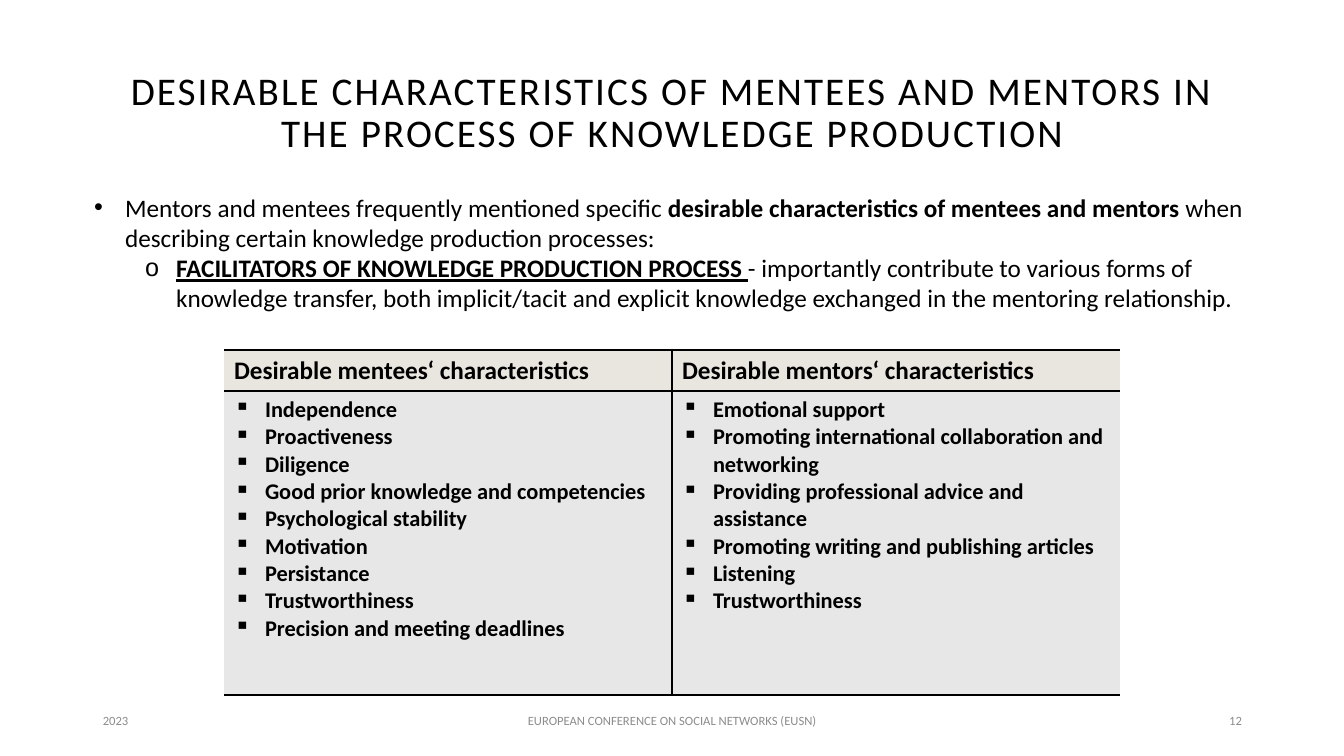
from lxml import etree
from pptx import Presentation
from pptx.dml.color import RGBColor
from pptx.enum.text import MSO_ANCHOR, MSO_AUTO_SIZE, PP_ALIGN
from pptx.oxml.ns import qn
from pptx.util import Pt

LEFT, CENTER, RIGHT = PP_ALIGN.LEFT, PP_ALIGN.CENTER, PP_ALIGN.RIGHT
MIDDLE, TOP = MSO_ANCHOR.MIDDLE, MSO_ANCHOR.TOP
FIXED = MSO_AUTO_SIZE.NONE

TITLE = "DESIRABLE CHARACTERISTICS OF MENTEES AND MENTORS IN THE PROCESS OF KNOWLEDGE PRODUCTION"
FINDINGS = [
    (0, "•", 31, [
        ("Mentors and mentees frequently mentioned specific ", {}),
        ("desirable characteristics of mentees and mentors ", {"bold": True}),
        ("when describing certain knowledge production processes:", {}),
    ]),
    (1, "o", 82, [
        ("FACILITATORS OF KNOWLEDGE PRODUCTION PROCESS ", {"bold": True, "underline": True}),
        ("- importantly contribute to various forms of knowledge transfer, both implicit/tacit "
         "and explicit knowledge exchanged in the mentoring relationship.", {}),
    ]),
]
CHARACTERISTICS = {
    "Desirable mentees‘ characteristics": [
        "Independence",
        "Proactiveness",
        "Diligence",
        "Good prior knowledge and competencies",
        "Psychological stability",
        "Motivation",
        "Persistance",
        "Trustworthiness",
        "Precision and meeting deadlines",
    ],
    "Desirable mentors‘ characteristics": [
        "Emotional support",
        "Promoting international collaboration and networking",
        "Providing professional advice and assistance",
        "Promoting writing and publishing articles",
        "Listening",
        "Trustworthiness",
    ],
}
FOOTERS = [
    ("2023", 93, 302, LEFT),
    ("EUROPEAN CONFERENCE ON SOCIAL NETWORKS (EUSN)", 445, 454, CENTER),
    ("12", 950, 302, RIGHT),
]

BLACK = RGBColor(0x00, 0x00, 0x00)
FOOTER_GRAY = RGBColor(0x8C, 0x8C, 0x8C)
HEADER_FILL = RGBColor(0xE9, 0xE6, 0xDF)
LIST_FILL = RGBColor(0xE7, 0xE7, 0xE7)

PX = 914400 / 100.8
HANGING = 31
ROW_HEIGHTS = [40, 304]
COLUMN_WIDTH = 448


def px(length):
    return round(length * PX)


def place(box, left, top, width, height, anchor):
    box.left, box.top, box.width, box.height = map(px, (left, top, width, height))
    frame = box.text_frame
    settings = {"word_wrap": True, "auto_size": FIXED, "vertical_anchor": anchor}
    for name, value in settings.items():
        setattr(frame, name, value)
    return frame


def write(paragraph, text, size, color=BLACK, **extra):
    run = paragraph.add_run()
    run.text = text
    run.font.color.rgb = color
    settings = {"name": "Calibri", "size": Pt(size), "bold": False, **extra}
    for name, value in settings.items():
        setattr(run.font, name, value)
    return run


def space(paragraph, alignment, line_spacing=1.0):
    settings = {"alignment": alignment, "line_spacing": line_spacing,
                "space_before": Pt(0), "space_after": Pt(0)}
    for name, value in settings.items():
        setattr(paragraph, name, value)


def add_bullet(paragraph, symbol, indent):
    properties = paragraph._p.get_or_add_pPr()
    properties.set("marL", str(px(indent)))
    properties.set("indent", str(-px(HANGING)))
    etree.SubElement(properties, qn("a:buChar")).set("char", symbol)


def paragraph_at(frame, index):
    return frame.paragraphs[0] if index == 0 else frame.add_paragraph()


def set_borders(cell, widths):
    properties = cell._tc.get_or_add_tcPr()
    for position, side in enumerate("LRTB"):
        line = etree.Element(qn(f"a:ln{side}"))
        if side in widths:
            line.set("w", str(Pt(widths[side])))
            fill = etree.SubElement(line, qn("a:solidFill"))
            etree.SubElement(fill, qn("a:srgbClr")).set("val", str(BLACK))
        else:
            etree.SubElement(line, qn("a:noFill"))
        properties.insert(position, line)


def add_title(slide):
    frame = place(slide.shapes.title, 93, 41, 1159, 146, MIDDLE)
    paragraph = frame.paragraphs[0]
    space(paragraph, CENTER, 0.9)
    run = write(paragraph, TITLE, 28)
    run.font._element.set("spc", "150")


def add_findings(slide):
    frame = place(slide.placeholders[1], 84, 187, 1192, 163, TOP)
    for index, (level, symbol, indent, parts) in enumerate(FINDINGS):
        paragraph = paragraph_at(frame, index)
        paragraph.level = level
        space(paragraph, LEFT)
        add_bullet(paragraph, symbol, indent)
        for text, emphasis in parts:
            write(paragraph, text, 18, **emphasis)


def add_characteristics(slide):
    columns = len(CHARACTERISTICS)
    table = slide.shapes.add_table(
        len(ROW_HEIGHTS), columns, px(224), px(350),
        px(COLUMN_WIDTH * columns), px(sum(ROW_HEIGHTS))).table
    table.first_row = table.horz_banding = False
    for row, height in zip(table.rows, ROW_HEIGHTS):
        row.height = px(height)
    for column, (heading, traits) in enumerate(CHARACTERISTICS.items()):
        table.columns[column].width = px(COLUMN_WIDTH)
        divider = {"R": 1} if column == 0 else {"L": 1}
        header, listing = table.cell(0, column), table.cell(1, column)
        for cell, color in ((header, HEADER_FILL), (listing, LIST_FILL)):
            cell.fill.solid()
            cell.fill.fore_color.rgb = color
            set_borders(cell, {"T": 2, "B": 2, **divider})
        write(header.text_frame.paragraphs[0], heading, 18, bold=True)
        for index, trait in enumerate(traits):
            paragraph = paragraph_at(listing.text_frame, index)
            add_bullet(paragraph, "▪", HANGING)
            write(paragraph, trait, 16, bold=True)


def add_footers(slide):
    for text, left, width, alignment in FOOTERS:
        box = slide.shapes.add_textbox(0, 0, 0, 0)
        paragraph = place(box, left, 701, width, 40, MIDDLE).paragraphs[0]
        space(paragraph, alignment)
        write(paragraph, text, 9, FOOTER_GRAY)


def main():
    deck = Presentation()
    deck.slide_width, deck.slide_height = px(1344), px(756)
    slide = deck.slides.add_slide(deck.slide_layouts[1])
    add_title(slide)
    add_findings(slide)
    add_characteristics(slide)
    add_footers(slide)
    deck.save("out.pptx")


if __name__ == "__main__":
    main()
